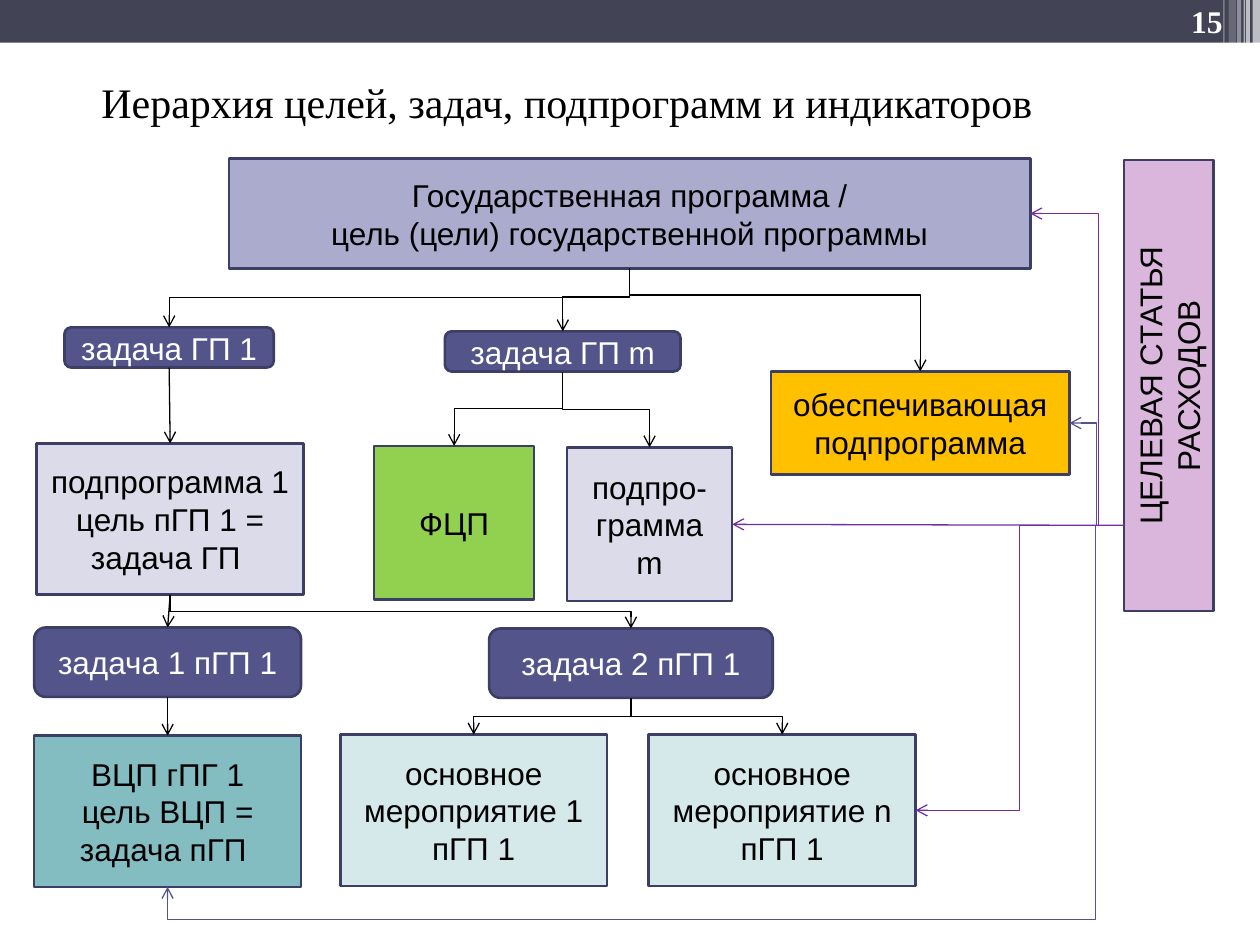
"""Build the slide on the hierarchy of goals, tasks, subprograms and indicators."""
from dataclasses import dataclass

from pptx import Presentation
from pptx.dml.color import RGBColor
from pptx.enum.shapes import MSO_CONNECTOR as LINK, MSO_SHAPE as SHAPE
from pptx.enum.text import MSO_ANCHOR as ANCHOR, PP_ALIGN as ALIGN
from pptx.oxml.ns import qn
from pptx.oxml.xmlchemy import OxmlElement
from pptx.util import Cm, Pt


@dataclass(frozen=True)
class Theme:
    bar: str = "424456"
    white: str = "FFFFFF"
    black: str = "000000"
    outline: str = "3D3E66"
    task: str = "53548A"
    program: str = "ABACCD"
    subprogram: str = "DBDBE9"
    support: str = "FFC000"
    federal: str = "92D050"
    agency: str = "83BCC1"
    activity: str = "D6E9EA"
    article: str = "DBB6DC"
    violet: str = "7030A0"
    serif: str = "Times New Roman"
    sans: str = "Arial"
    title_size: int = 24
    text_size: int = 18
    box_line: float = 1.5
    link_line: float = 0.75


THEME = Theme()
BOTTOM, TOP, LEFT, RIGHT = 2, 0, 1, 3
STRIPES = [
    (25.25, 0.15, 1.73, 65), (25.12, 0.08, 1.73, 65), (25.07, 0.03, 1.73, 60),
    (24.94, 0.08, 1.73, 40), (24.77, 0.15, 1.63, 20), (24.66, 0.03, 1.63, 30),
]
BOXES = {
    "program": ("Государственная программа /\nцель (цели) государственной программы",
                4.62, 3.2, 16.15, 2.21, THEME.program),
    "subprogram 1": ("подпрограмма 1\nцель пГП 1 = задача ГП ",
                     0.74, 8.94, 5.38, 3.05, THEME.subprogram),
    "support": ("обеспечивающая\nподпрограмма", 15.54, 7.49, 6.02, 2.08, THEME.support),
    "subprogram m": ("подпро-грамма m", 11.43, 9.02, 3.33, 3.1, THEME.subprogram),
    "federal": ("ФЦП", 7.54, 8.99, 3.23, 3.1, THEME.federal),
    "task 1": ("задача ГП 1", 1.3, 6.6, 4.22, 0.81, THEME.task),
    "task m": ("задача ГП m", 8.97, 6.68, 4.75, 0.81, THEME.task),
    "subtask 1": ("задача 1 пГП 1", 0.69, 12.65, 5.38, 1.4, THEME.task),
    "subtask 2": ("задача 2 пГП 1", 9.86, 12.67, 5.72, 1.4, THEME.task),
    "agency": ("ВЦП гПГ 1\nцель ВЦП = задача пГП ", 0.69, 14.83, 5.38, 3.05, THEME.agency),
    "activity 1": ("основное мероприятие 1 пГП 1", 6.86, 14.81, 5.38, 3.05, THEME.activity),
    "activity n": ("основное мероприятие n пГП 1", 13.08, 14.81, 5.38, 3.05, THEME.activity),
    "article": ("ЦЕЛЕВАЯ СТАТЬЯ РАСХОДОВ", 22.66, 3.23, 1.8, 9.09, THEME.article),
}
STRAIGHT_STEPS = [("task 1", "subprogram 1"), ("subprogram 1", "subtask 1"),
                  ("subtask 1", "agency")]
BRANCHES = [
    ("program", "task 1", 0.5), ("program", "task m", 0.45), ("program", "support", 0.26),
    ("task m", "federal", 0.5), ("task m", "subprogram m", 0.5),
    ("subprogram 1", "subtask 2", 0.5),
    ("subtask 2", "activity 1", 0.5), ("subtask 2", "activity n", 0.5),
]
ARTICLE_LINKS = [
    ("program", RIGHT, THEME.violet, (0.27,)),
    ("activity n", RIGHT, THEME.violet, (0.5,)),
    ("support", RIGHT, THEME.task, (0.5,)),
    ("agency", BOTTOM, THEME.task, (0.03, 1.09)),
]


def write(frame, text, *, font=THEME.sans, size=THEME.text_size, color=THEME.black, bold=False):
    """Fill a text frame with centred paragraphs in one format."""
    frame.word_wrap = True
    frame.vertical_anchor = ANCHOR.MIDDLE
    frame.text = text
    for para in frame.paragraphs:
        para.alignment = ALIGN.CENTER
        for span in para.runs:
            span.font.name = font
            span.font.size = Pt(size)
            span.font.bold = bold
            span.font.color.rgb = RGBColor.from_string(color)


def add_block(page, kind, left, top, width, height, fill):
    """Add a plain filled shape without outline or shadow."""
    block = page.shapes.add_shape(kind, Cm(left), Cm(top), Cm(width), Cm(height))
    block.shadow.inherit = False
    block.fill.solid()
    block.fill.fore_color.rgb = RGBColor.from_string(fill)
    block.line.fill.background()
    return block


def add_box(page, text, left, top, width, height, fill):
    """Add an outlined box with a label; tasks are rounded, tall boxes read upwards."""
    is_task = fill == THEME.task
    kind = SHAPE.ROUNDED_RECTANGLE if is_task else SHAPE.RECTANGLE
    box = add_block(page, kind, left, top, width, height, fill)
    box.line.color.rgb = RGBColor.from_string(THEME.outline)
    box.line.width = Pt(THEME.box_line)
    write(box.text_frame, text, color=THEME.white if is_task else THEME.black)
    if height > 2 * width:
        box.text_frame._txBody.bodyPr.set("vert", "vert270")
    return box


def add_header(page):
    """Add the top bar with its translucent stripes and the page number."""
    add_block(page, SHAPE.RECTANGLE, 0, 0, 25.4, 0.86, THEME.bar)
    for left, width, height, opacity in STRIPES:
        stripe = add_block(page, SHAPE.RECTANGLE, left, 0, width, height, THEME.white)
        alpha = OxmlElement("a:alpha")
        alpha.set("val", str(opacity * 1000))
        stripe._element.spPr.find(".//" + qn("a:srgbClr")).append(alpha)
    number = page.shapes.add_textbox(Cm(23.72), Cm(0.05), Cm(1.22), Cm(0.76)).text_frame
    number.margin_left = number.margin_right = number.margin_top = number.margin_bottom = 0
    write(number, "15", font=THEME.serif, color=THEME.white, bold=True)


def add_title(page, text):
    """Place and fill the title placeholder."""
    title = page.shapes.title
    title.left, title.top, title.width, title.height = Cm(0), Cm(0.58), Cm(22.86), Cm(2.95)
    write(title.text_frame, text, font=THEME.serif, size=THEME.title_size)


def side(box, site):
    """Return the middle point of a box side."""
    middle_x, middle_y = box.left + box.width // 2, box.top + box.height // 2
    return {TOP: (middle_x, box.top), LEFT: (box.left, middle_y),
            BOTTOM: (middle_x, box.top + box.height),
            RIGHT: (box.left + box.width, middle_y)}[site]


def add_arrow(page, kind, start, end, color):
    """Add a thin connector with an open arrowhead at its end."""
    arrow = page.shapes.add_connector(kind, *start, *end)
    arrow.line.color.rgb = RGBColor.from_string(color)
    arrow.line.width = Pt(THEME.link_line)
    head = OxmlElement("a:tailEnd")
    head.set("type", "arrow")
    arrow.line._get_or_add_ln().append(head)
    arrow._element.spPr.append(OxmlElement("a:effectLst"))
    return arrow


def add_elbow(page, start, end, color, bends):
    """Add a bent arrow that leaves sideways, with bends as shares of its extent."""
    arrow = add_arrow(page, LINK.ELBOW, start, end, color)
    geometry = arrow._element.spPr.find(qn("a:prstGeom"))
    geometry.set("prst", f"bentConnector{len(bends) + 2}")
    guides = geometry.get_or_add_avLst()
    for index, bend in enumerate(bends, 1):
        guide = OxmlElement("a:gd")
        guide.set("name", f"adj{index}")
        guide.set("fmla", f"val {round(bend * 100000)}")
        guides.append(guide)
    return arrow


def add_branch(page, upper, lower, bend):
    """Add a bent arrow from the bottom of one box down to the top of another."""
    (x1, y1), (x2, y2) = side(upper, BOTTOM), side(lower, TOP)
    length, spread = y2 - y1, abs(x2 - x1)
    left, top = (x1 + x2 - length) // 2, (y1 + y2 - spread) // 2
    near, far = (left, left + length) if x2 < x1 else (left + length, left)
    arrow = add_elbow(page, (near, top), (far, top + spread), THEME.black, (bend,))
    turn = 90 if x2 < x1 else 270
    arrow._element.spPr.find(qn("a:xfrm")).set("rot", str(turn * 60000))


def main():
    """Build and save the deck."""
    deck = Presentation()
    deck.slide_width, deck.slide_height = Cm(25.4), Cm(19.05)
    page = deck.slides.add_slide(deck.slide_layouts[5])
    add_header(page)
    add_title(page, "Иерархия целей, задач, подпрограмм и индикаторов")
    boxes = {name: add_box(page, *details) for name, details in BOXES.items()}
    for upper, lower in STRAIGHT_STEPS:
        start, end = side(boxes[upper], BOTTOM), side(boxes[lower], TOP)
        arrow = add_arrow(page, LINK.STRAIGHT, start, end, THEME.black)
        arrow.begin_connect(boxes[upper], BOTTOM)
        arrow.end_connect(boxes[lower], TOP)
    for upper, lower, bend in BRANCHES:
        add_branch(page, boxes[upper], boxes[lower], bend)
    origin = (boxes["article"].left, Cm(10.59))
    for name, site, color, bends in ARTICLE_LINKS:
        add_elbow(page, origin, side(boxes[name], site), color, bends)
    target = boxes["subprogram m"]
    arrow = add_arrow(page, LINK.STRAIGHT, origin, side(target, RIGHT), THEME.violet)
    arrow.end_connect(target, RIGHT)
    deck.save("out.pptx")


if __name__ == "__main__":
    main()
